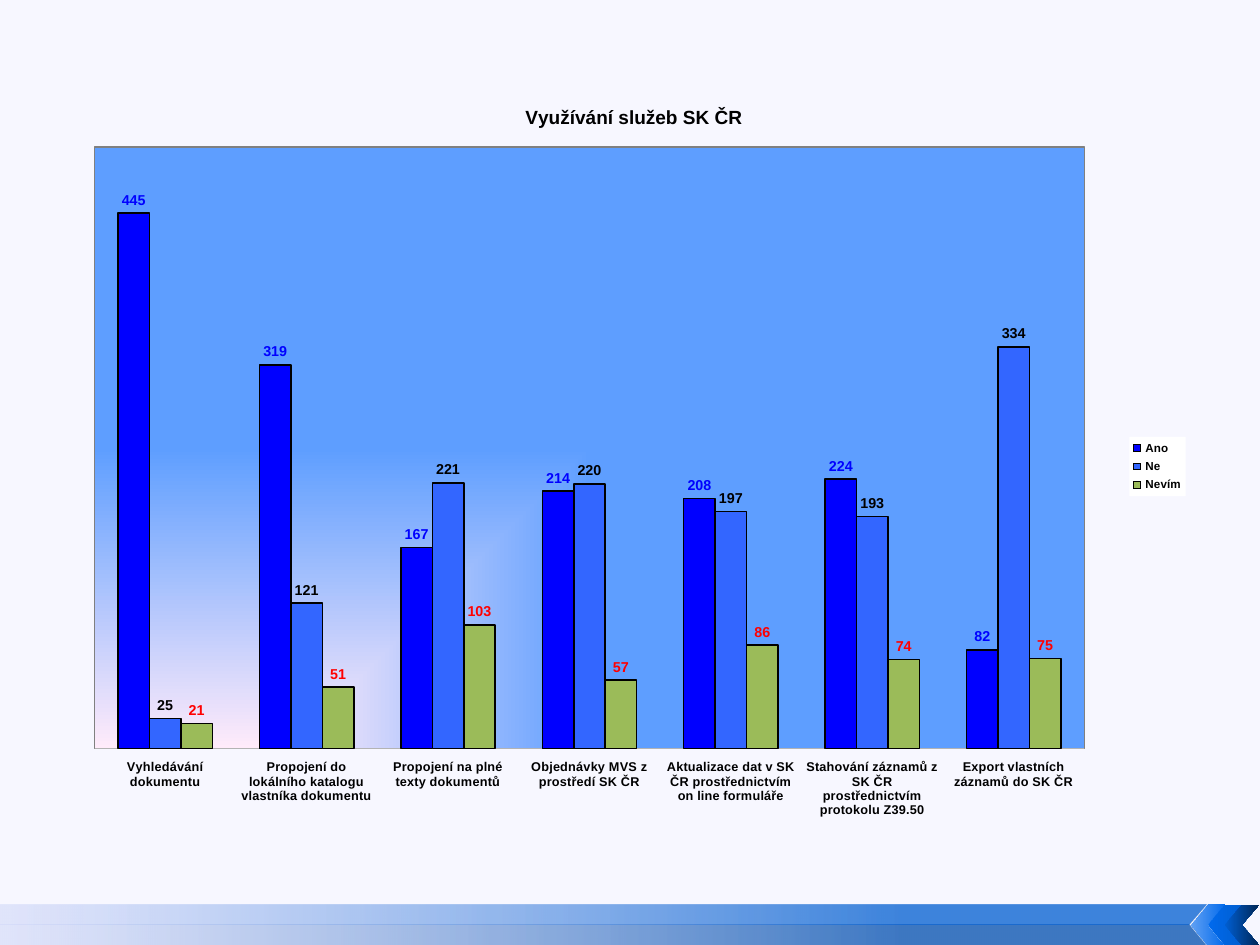
"""Build a slide with a clustered column chart on the use of catalogue services."""
from dataclasses import dataclass

from pptx import Presentation
from pptx.chart.data import CategoryChartData
from pptx.dml.color import RGBColor
from pptx.enum.chart import XL_CHART_TYPE, XL_LABEL_POSITION, XL_LEGEND_POSITION, XL_TICK_LABEL_POSITION, XL_TICK_MARK
from pptx.enum.shapes import MSO_SHAPE
from pptx.oxml import parse_xml
from pptx.oxml.ns import nsdecls, qn
from pptx.util import Pt

SCALE = 8000


@dataclass(frozen=True)
class Theme:
    """Colours, fonts and type sizes of the slide."""
    back: str = "F7F7FF"
    ink: str = "000000"
    white: str = "FFFFFF"
    edge: str = "808080"
    rule: str = "B3B3B3"
    pink: str = "FFEBFA"
    sky: str = "5E9EFF"
    mist: str = "CCD4F8"
    deep: str = "004EAF"
    blue: str = "005ED1"
    bright: str = "006AED"
    night: str = "002757"
    font: str = "Arial"
    base: str = "Cambria"
    title: float = 12
    label: float = 9
    axis: float = 8
    key: float = 7.3
    body: float = 10


THEME = Theme()
TITLE = "Využívání služeb SK ČR"
GROUPS = [
    "Vyhledávání dokumentu",
    "Propojení do lokálního katalogu vlastníka dokumentu",
    "Propojení na plné texty dokumentů",
    "Objednávky MVS z prostředí SK ČR",
    "Aktualizace dat v SK ČR prostřednictvím on line formuláře",
    "Stahování záznamů z SK ČR prostřednictvím protokolu Z39.50",
    "Export vlastních záznamů do SK ČR",
]
SERIES = [
    ("Ano", (445, 319, 167, 214, 208, 224, 82), "0000FF", "0000FF"),
    ("Ne", (25, 121, 221, 220, 197, 193, 334), "3366FF", THEME.ink),
    ("Nevím", (21, 51, 103, 57, 86, 74, 75), "9BBB59", "FF0000"),
]


def px(count):
    """Turn pixels into EMU."""
    return count * SCALE


def tint(name):
    """Give the colour object for a hex name."""
    return RGBColor.from_string(name)


def blend(stops, course):
    """Give the XML of a gradient fill from (place, colour, opacity) stops."""
    marks = "".join(
        f'<a:gs pos="{place * 1000}"><a:srgbClr val="{name}">'
        f'<a:alpha val="{alpha * 1000}"/></a:srgbClr></a:gs>'
        for place, name, alpha in stops)
    return (f'<a:gradFill {nsdecls("a")} rotWithShape="1">'
            f'<a:gsLst>{marks}</a:gsLst>{course}</a:gradFill>')


def paint(shape, stops):
    """Fill a shape with a gradient from right to left, without a line."""
    shape.shadow.inherit = False
    shape.line.fill.background()
    shape.fill.background()
    props = shape._element.spPr
    fill = parse_xml(blend(stops, '<a:lin ang="10800000" scaled="0"/>'))
    props.replace(props.find(qn("a:noFill")), fill)


def add_band(slide, points, tone):
    """Draw one footer band that fades to the left."""
    form = slide.shapes.build_freeform(*points[0], scale=SCALE)
    form.add_line_segments(points[1:], close=True)
    paint(form.convert_to_shape(), [(25, tone, 75), (100, THEME.mist, 50)])


def add_arrow(slide, left, first, last, alpha):
    """Draw one chevron that points to the left."""
    shape = slide.shapes.add_shape(MSO_SHAPE.CHEVRON, px(left), px(905), px(34), px(40))
    shape._element.spPr.find(qn("a:xfrm")).set("flipH", "1")
    paint(shape, [(0, first, alpha), (100, last, 100)])


def set_font(font, size, tone=THEME.ink):
    """Set a bold chart font."""
    font.name, font.size, font.bold = THEME.font, Pt(size), True
    font.color.rgb = tint(tone)


def place(node, index, inner=False, **parts):
    """Give a chart part a fixed layout in shares of the chart."""
    for old in node.findall(qn("c:layout")):
        node.remove(old)
    target = '<c:layoutTarget val="inner"/>' if inner else ""
    modes = '<c:xMode val="edge"/><c:yMode val="edge"/>'
    shares = "".join(f'<c:{key} val="{share}"/>' for key, share in parts.items())
    node.insert(index, parse_xml(
        f'<c:layout {nsdecls("c")}><c:manualLayout>{target}{modes}{shares}'
        '</c:manualLayout></c:layout>'))


def set_back(node, fill, line=""):
    """Give a chart part a background."""
    props = parse_xml(f'<c:spPr {nsdecls("c", "a")}>{fill}{line}</c:spPr>')
    text = node.find(qn("c:txPr"))
    if text is None:
        node.append(props)
    else:
        text.addprevious(props)


def solid(name):
    """Give the XML of a plain fill."""
    return f'<a:solidFill><a:srgbClr val="{name}"/></a:solidFill>'


def set_axes(chart):
    """Style the group axis and hide the value axis."""
    axis = chart.category_axis
    axis.major_tick_mark = axis.minor_tick_mark = XL_TICK_MARK.NONE
    axis.tick_label_position = XL_TICK_LABEL_POSITION.LOW
    axis.format.line.color.rgb = tint(THEME.rule)
    axis.format.line.width = Pt(0.75)
    set_font(axis.tick_labels.font, THEME.axis)
    scale = chart.value_axis
    scale.minimum_scale, scale.maximum_scale = 0, 500
    scale.has_major_gridlines = False
    scale.visible = False


def set_bars(plot):
    """Colour the bars and their value labels."""
    plot.gap_width, plot.overlap = 150, 0
    plot.vary_by_categories = False
    for bars, (_, _, tone, ink) in zip(plot.series, SERIES):
        bars.invert_if_negative = False
        bars.format.fill.solid()
        bars.format.fill.fore_color.rgb = tint(tone)
        bars.format.line.color.rgb = tint(THEME.ink)
        bars.format.line.width = Pt(1)
        labels = bars.data_labels
        labels.show_value = True
        labels.position = XL_LABEL_POSITION.OUTSIDE_END
        set_font(labels.font, THEME.label, ink)


def add_chart(slide):
    """Add the column chart with its title and legend."""
    data = CategoryChartData()
    data.categories = GROUPS
    for name, counts, _, _ in SERIES:
        data.add_series(name, counts)
    chart = slide.shapes.add_chart(
        XL_CHART_TYPE.COLUMN_CLUSTERED, px(72), px(95), px(1125), px(743), data).chart
    chart.font.name, chart.font.size = THEME.base, Pt(THEME.body)
    chart.font.color.rgb = tint(THEME.ink)
    set_axes(chart)
    set_bars(chart.plots[0])
    frame = chart.chart_title.text_frame
    frame.text = TITLE
    set_font(frame.paragraphs[0].runs[0].font, THEME.title)
    place(chart.chart_title._element, 1, x=0.4, y=0.01)
    chart.has_legend = True
    legend = chart.legend
    legend.position = XL_LEGEND_POSITION.RIGHT
    legend.include_in_layout = False
    set_font(legend.font, THEME.key)
    place(legend._element, 1, x=0.94, y=0.46, w=0.05, h=0.08)
    set_back(legend._element, solid(THEME.white))
    area = chart._chartSpace.chart.plotArea
    place(area, 0, inner=True, x=0.02, y=0.07, w=0.88, h=0.81)
    course = '<a:path path="rect"><a:fillToRect t="100000" r="100000"/></a:path>'
    fill = blend([(0, THEME.pink, 100), (100, THEME.sky, 100)], course)
    set_back(area, fill, f'<a:ln w="9525">{solid(THEME.edge)}</a:ln>')


def main():
    """Build and save the slide."""
    deck = Presentation()
    deck.slide_width, deck.slide_height = px(1260), px(945)
    slide = deck.slides.add_slide(deck.slide_layouts[6])
    slide.background.fill.solid()
    slide.background.fill.fore_color.rgb = tint(THEME.back)
    for edge, tone in ((945, THEME.deep), (905, THEME.blue)):
        add_band(slide, [(1207, edge), (0, edge), (0, 925), (1189, 925)], tone)
    tones = [THEME.bright, THEME.bright, THEME.blue, THEME.night]
    for step, alpha in enumerate((60, 100, 100)):
        add_arrow(slide, 1191 + 17 * step, tones[step], tones[step + 1], alpha)
    add_chart(slide)
    deck.save("out.pptx")


if __name__ == "__main__":
    main()
